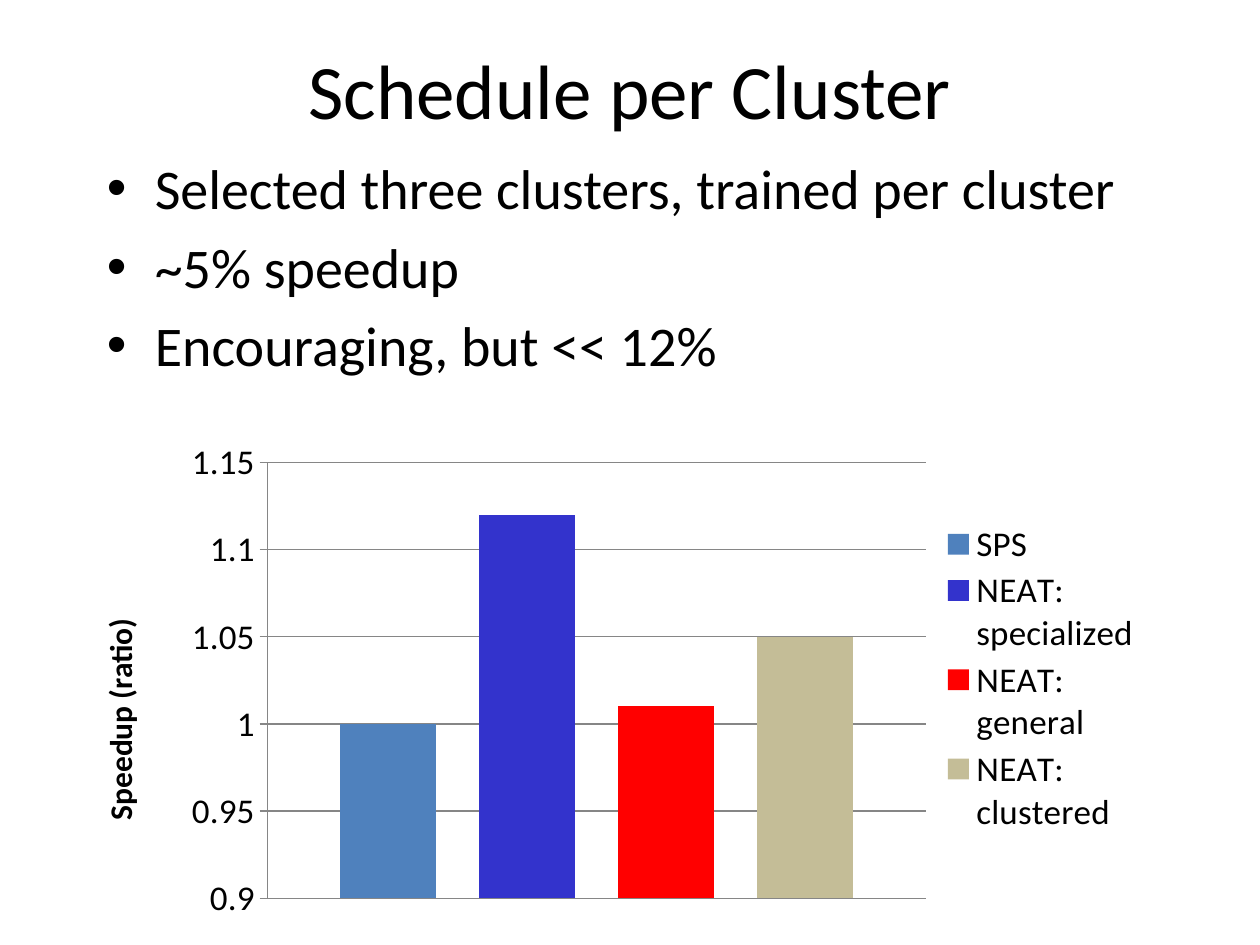
from pptx import Presentation
from pptx.chart.data import CategoryChartData
from pptx.dml.color import RGBColor
from pptx.enum.chart import XL_CHART_TYPE, XL_LEGEND_POSITION, XL_TICK_MARK
from pptx.enum.text import MSO_ANCHOR, PP_ALIGN
from pptx.oxml import parse_xml
from pptx.oxml.ns import nsdecls, qn
from pptx.util import Inches, Pt

COLUMNS = XL_CHART_TYPE.COLUMN_CLUSTERED
LEGEND_RIGHT = XL_LEGEND_POSITION.RIGHT
TICK_OUTSIDE = XL_TICK_MARK.OUTSIDE
MIDDLE, TOP = MSO_ANCHOR.MIDDLE, MSO_ANCHOR.TOP
CENTER, LEFT = PP_ALIGN.CENTER, PP_ALIGN.LEFT

BULLETS = [
    "Selected three clusters, trained per cluster",
    "~5% speedup",
    "Encouraging, but << 12%",
]
SPEEDUPS = [
    ("SPS", 1, "4F81BD"),
    ("NEAT: specialized", 1.12, "3333CC"),
    ("NEAT: general", 1.01, "FF0000"),
    ("NEAT: clustered", 1.05, "C4BD97"),
]
PLOT_BOX = (0.12, 0.04, 0.66, 0.92)
LEGEND_BOX = (0.79, 0.16, 0.21, 0.67)


def color(value):
    return RGBColor.from_string(value)


class SlideBuilder:
    """Holds the style and the current slide, and adds elements to it."""

    font_name = "Calibri"
    ink = "000000"
    line = "868686"

    def __init__(self, slide):
        self.slide = slide

    def style_font(self, font, size, bold=False):
        font.name = self.font_name
        font.size = Pt(size)
        font.bold = bold
        font.color.rgb = color(self.ink)

    def text(self, box, lines, size, bold=False, align=LEFT, anchor=TOP):
        shape = self.slide.shapes.add_textbox(*map(Inches, box))
        frame = shape.text_frame
        frame.word_wrap = True
        frame.vertical_anchor = anchor
        frame.text = "\n".join(lines)
        for paragraph in frame.paragraphs:
            paragraph.alignment = align
            self.style_font(paragraph.runs[0].font, size, bold)
        return shape

    def bullets(self, box, lines, size):
        shape = self.text(box, lines, size)
        for paragraph in shape.text_frame.paragraphs:
            paragraph.space_before = Pt(size * 0.2)
            properties = paragraph._p.get_or_add_pPr()
            properties.set("marL", str(Inches(0.38)))
            properties.set("indent", str(Inches(-0.38)))
            properties.append(parse_xml(f'<a:buFont {nsdecls("a")} typeface="Arial"/>'))
            properties.append(parse_xml(f'<a:buChar {nsdecls("a")} char="•"/>'))

    def column_chart(self, box, rows, size):
        data = CategoryChartData()
        data.categories = ["1"]
        for name, value, _ in rows:
            data.add_series(name, [value])
        frame = self.slide.shapes.add_chart(COLUMNS, *map(Inches, box), data)
        chart = frame.chart
        chart.has_title = False
        self.style_font(chart.font, 10)
        plot = chart.plots[0]
        plot.vary_by_categories = False
        plot.gap_width = 150
        plot.overlap = -44
        for series, (_, _, fill) in zip(plot.series, rows):
            series.format.fill.solid()
            series.format.fill.fore_color.rgb = color(fill)
        chart.category_axis.visible = False
        axis = chart.value_axis
        axis.minimum_scale, axis.maximum_scale, axis.major_unit = 0.9, 1.15, 0.05
        axis.major_tick_mark = TICK_OUTSIDE
        axis.has_major_gridlines = True
        axis.tick_labels.number_format = "General"
        axis.tick_labels.number_format_is_linked = False
        self.style_font(axis.tick_labels.font, size)
        for line in (axis.format.line, axis.major_gridlines.format.line):
            line.color.rgb = color(self.line)
            line.width = Pt(0.75)
        chart.has_legend = True
        legend = chart.legend
        legend.position = LEGEND_RIGHT
        legend.include_in_layout = False
        self.style_font(legend.font, size)
        self.place(chart._chartSpace.chart.plotArea, 0, PLOT_BOX, inner=True)
        self.place(legend._element, 1, LEGEND_BOX)

    def place(self, element, index, box, inner=False):
        for layout in element.findall(qn("c:layout")):
            element.remove(layout)
        target = '<c:layoutTarget val="inner"/>' if inner else ""
        modes = '<c:xMode val="edge"/><c:yMode val="edge"/>'
        sizes = "".join(f'<c:{key} val="{value}"/>' for key, value in zip("xywh", box))
        element.insert(index, parse_xml(
            f'<c:layout {nsdecls("c")}><c:manualLayout>'
            f"{target}{modes}{sizes}</c:manualLayout></c:layout>"))


def main():
    presentation = Presentation()
    presentation.slide_width, presentation.slide_height = Inches(10), Inches(7.5)
    builder = SlideBuilder(presentation.slides.add_slide(presentation.slide_layouts[6]))
    builder.text((0.75, 0.08, 8.5, 1.25), ["Schedule per Cluster"], 44,
                 align=CENTER, anchor=MIDDLE)
    builder.bullets((0.75, 1.17, 8.92, 4.83), BULLETS, 32)
    builder.column_chart((1.17, 3.5, 7.92, 3.8), SPEEDUPS, 20)
    axis_title = builder.text((-0.22, 5.14, 2.44, 0.5), ["Speedup (ratio)"], 18, bold=True)
    axis_title.rotation = 270
    presentation.save("out.pptx")


if __name__ == "__main__":
    main()
